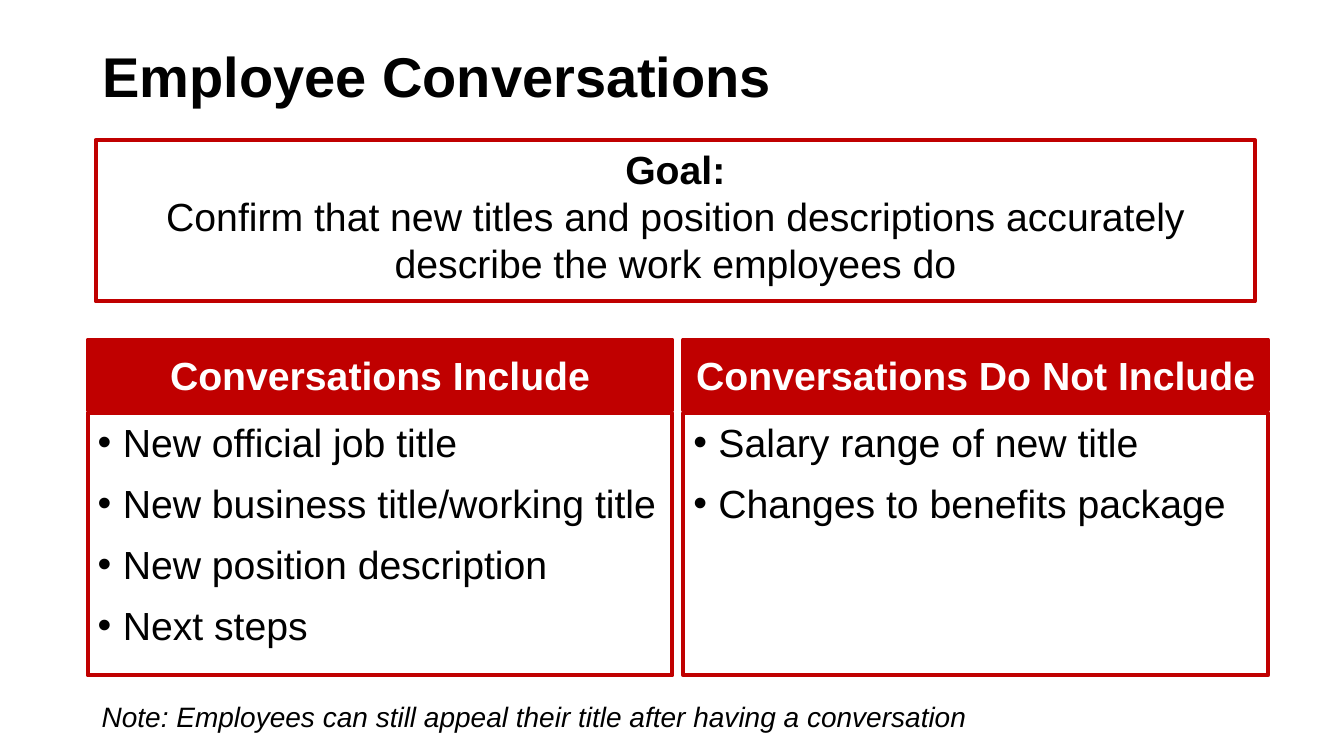
from pptx import Presentation
from pptx.dml.color import RGBColor
from pptx.enum.shapes import MSO_SHAPE as Shape
from pptx.enum.text import MSO_ANCHOR as Anchor, PP_ALIGN as Align
from pptx.oxml.ns import qn
from pptx.util import Pt
from lxml.etree import SubElement

COLOURS = {"red": "C00000", "black": "000000", "white": "FFFFFF"}

COLUMNS = {
    "Conversations Include": [
        "New official job title",
        "New business title/working title",
        "New position description",
        "Next steps",
    ],
    "Conversations Do Not Include": [
        "Salary range of new title",
        "Changes to benefits package",
    ],
}
COLUMN_LEFT, COLUMN_STEP, COLUMN_WIDTH = 62.64, 425.5, 417.6
BULLET_INDENT = 18


def colour(name):
    return RGBColor.from_string(COLOURS[name])


class SlideBuilder:
    """Holds the text style and the page being filled."""

    font_name = "Arial"
    size = 28
    border = 3

    def __init__(self, deck):
        self.page = deck.slides.add_slide(deck.slide_layouts[6])

    def fill_text(self, box, lines, anchor=Anchor.TOP, ink="black", gap=0, bullet=False,
                  formats=None, **font):
        """Fill a box; each line is a text or a (text, font values) pair."""
        frame = box.text_frame
        frame.word_wrap = True
        frame.vertical_anchor = anchor
        for index, line in enumerate(lines):
            text, extra = (line, {}) if isinstance(line, str) else line
            para = frame.paragraphs[0] if index == 0 else frame.add_paragraph()
            values = {"alignment": Align.LEFT, "space_before": Pt(gap if index else 0)}
            for key, value in (values | (formats or {})).items():
                setattr(para, key, value)
            if bullet:
                self.add_bullet(para)
            span = para.add_run()
            span.text = text
            values = {"name": self.font_name, "size": Pt(self.size), "bold": False}
            for key, value in (values | font | extra).items():
                setattr(span.font, key, value)
            span.font.color.rgb = colour(ink)

    def add_bullet(self, para):
        properties = para._p.get_or_add_pPr()
        properties.set("marL", str(Pt(BULLET_INDENT)))
        properties.set("indent", str(-Pt(BULLET_INDENT)))
        SubElement(properties, qn("a:buFont")).set("typeface", self.font_name)
        SubElement(properties, qn("a:buChar")).set("char", "•")

    def text(self, place, lines, **style):
        box = self.page.shapes.add_textbox(*map(Pt, place))
        self.fill_text(box, lines, **style)

    def panel(self, place, lines, fill=None, **style):
        """Draw a red-bordered rectangle with text."""
        box = self.page.shapes.add_shape(Shape.RECTANGLE, *map(Pt, place))
        box.shadow.inherit = False
        if fill:
            box.fill.solid()
            box.fill.fore_color.rgb = colour(fill)
        else:
            box.fill.background()
        box.line.color.rgb = colour("red")
        box.line.width = Pt(self.border)
        self.fill_text(box, lines, **style)


def main():
    deck = Presentation()
    deck.slide_width, deck.slide_height = Pt(960), Pt(540)
    builder = SlideBuilder(deck)
    centred = {"alignment": Align.CENTER}

    builder.text((66.24, 31.68, 828, 50.4), ["Employee Conversations"], anchor=Anchor.MIDDLE,
                 formats={"line_spacing": 0.9}, size=Pt(40), bold=True)
    builder.panel((68.4, 100.08, 828, 115.2), [
        ("Goal:", {"bold": True}),
        "Confirm that new titles and position descriptions accurately "
        "describe the work employees do",
    ], formats=centred)

    for index, (heading, points) in enumerate(COLUMNS.items()):
        left = COLUMN_LEFT + index * COLUMN_STEP
        builder.panel((left, 242.64, COLUMN_WIDTH, 50.4), [heading], fill="red", ink="white",
                      anchor=Anchor.MIDDLE, formats=centred, bold=True)
        builder.panel((left, 295.2, COLUMN_WIDTH, 187.2), points, gap=10, bullet=True)

    builder.text((65.52, 496.08, 843.12, 31.68),
                 ["Note: Employees can still appeal their title after having a conversation"],
                 size=Pt(20), italic=True)
    deck.save("out.pptx")


if __name__ == "__main__":
    main()
